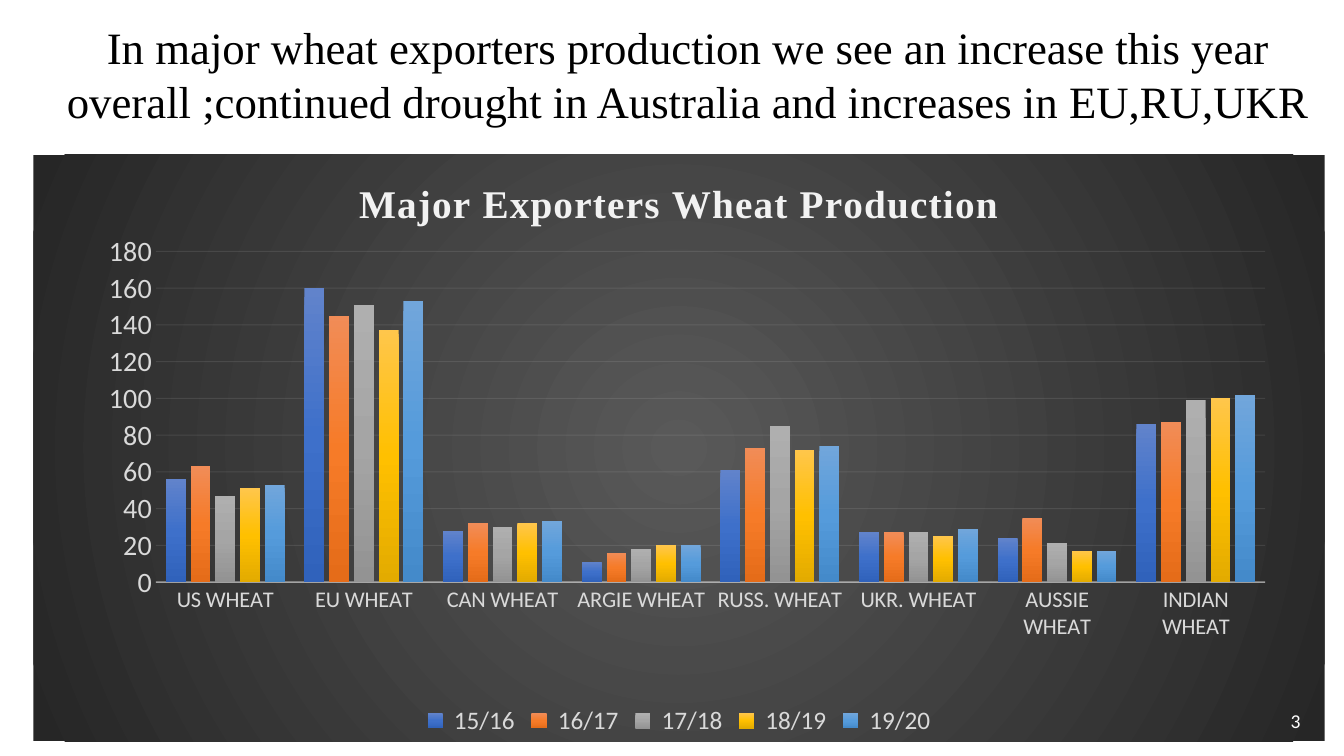
from lxml import etree
from pptx import Presentation
from pptx.chart.data import CategoryChartData
from pptx.dml.color import RGBColor
from pptx.enum.chart import XL_CHART_TYPE as ChartType, XL_LEGEND_POSITION as LegendPosition
from pptx.enum.chart import XL_TICK_MARK as TickMark
from pptx.enum.text import MSO_ANCHOR as Anchor, PP_ALIGN as Align
from pptx.oxml import parse_xml
from pptx.oxml.ns import nsdecls, qn
from pptx.util import Pt

COLORS = {
    "black": "000000",
    "white": "FFFFFF",
    "title": "F2F2F2",
    "label": "D9D9D9",
    "center": "595959",
    "edge": "262626",
}
LINEAR = '<a:lin ang="5400000" scaled="0"/>'
RADIAL = ('<a:path path="circle"><a:fillToRect l="50000" t="50000" '
          'r="50000" b="50000"/></a:path>')

categories = ["US WHEAT", "EU WHEAT", "CAN WHEAT", "ARGIE WHEAT",
              "RUSS. WHEAT", "UKR. WHEAT", "AUSSIE WHEAT", "INDIAN WHEAT"]
# season: (production, gradient from top to bottom)
seasons = {
    " 15/16": ([56, 160, 28, 11, 61, 27, 24, 86], ["6183CB", "3E70CA", "3062BB"]),
    " 16/17": ([63, 145, 32, 16, 73, 27, 35, 87], ["F18C57", "F67B28", "E56C19"]),
    " 17/18": ([47, 151, 30, 18, 85, 27, 21, 99], ["AFAFAF", "A5A5A5", "939393"]),
    " 18/19": ([51, 137, 32, 20, 72, 25, 17, 100], ["FFC64B", "FFC000", "E3AB00"]),
    " 19/20": ([53, 153, 33, 20, 74, 29, 17, 102], ["71A6DB", "559BDB", "448ACA"]),
}


def gradient_properties(stops, direction):
    """Return a c:spPr with evenly spaced gradient stops and no outline."""
    step = 100000 // (len(stops) - 1)
    stop_xml = "".join(f'<a:gs pos="{i * step}"><a:srgbClr val="{color}"/></a:gs>'
                       for i, color in enumerate(stops))
    return parse_xml(f'<c:spPr {nsdecls("c", "a")}><a:gradFill rotWithShape="1">'
                     f'<a:gsLst>{stop_xml}</a:gsLst>{direction}</a:gradFill>'
                     '<a:ln><a:noFill/></a:ln></c:spPr>')


def set_font(font, size, color, name="Calibri", bold=False):
    font.size = Pt(size)
    font.color.rgb = RGBColor.from_string(COLORS[color])
    font.name = name
    font.bold = bold


presentation = Presentation()
presentation.slide_width, presentation.slide_height = Pt(960), Pt(540)
slide = presentation.slides.add_slide(presentation.slide_layouts[6])

# Chart
chart_data = CategoryChartData(number_format="#,##0")
chart_data.categories = categories
for season, (production, _) in seasons.items():
    chart_data.add_series(season, production)
chart = slide.shapes.add_chart(ChartType.COLUMN_CLUSTERED, Pt(23.76), Pt(110.4),
                               Pt(922.4), Pt(419), chart_data).chart
set_font(chart.font, 10, "black")
chart_space = chart.element
chart_space.find(qn("c:chart")).addnext(
    gradient_properties([COLORS["center"], COLORS["edge"]], RADIAL))

chart.has_title = True
title = chart.chart_title.text_frame.paragraphs[0]
title_run = title.add_run()
title_run.text = "Major Exporters Wheat Production"
set_font(title_run.font, 28, "title", "Times New Roman", True)
title_run.font._element.set("spc", "100")
chart.chart_title.include_in_layout = False

chart.has_legend = True
chart.legend.position = LegendPosition.BOTTOM
chart.legend.include_in_layout = False
set_font(chart.legend.font, 18, "label")

plot = chart.plots[0]
plot.gap_width = 100
plot.overlap = -24
plot.vary_by_categories = False
for series, (_, gradient) in zip(plot.series, seasons.values()):
    properties = series._element.get_or_add_spPr()
    properties.getparent().replace(properties, gradient_properties(gradient, LINEAR))

category_axis, value_axis = chart.category_axis, chart.value_axis
for axis, size in ((category_axis, 16), (value_axis, 20)):
    axis.major_tick_mark = axis.minor_tick_mark = TickMark.NONE
    set_font(axis.tick_labels.font, size, "label")
value_axis.minimum_scale, value_axis.maximum_scale, value_axis.major_unit = 0, 180, 20
value_axis.tick_labels.number_format = "#,##0"
value_axis.tick_labels.number_format_is_linked = False
value_axis.format.line.fill.background()
value_axis.has_major_gridlines = True
for line, width, opacity in ((category_axis.format.line, 1, 54),
                             (value_axis.major_gridlines.format.line, 0.75, 10)):
    line.width = Pt(width)
    line.color.rgb = RGBColor.from_string(COLORS["title"])
    color = line.fill._xPr.find(".//" + qn("a:srgbClr"))
    etree.SubElement(color, qn("a:alpha")).set("val", str(opacity * 1000))

plot_area = chart_space.find(".//" + qn("c:plotArea"))
for layout in plot_area.findall(qn("c:layout")):
    plot_area.remove(layout)
plot_area.insert(0, parse_xml(
    f'<c:layout {nsdecls("c")}><c:manualLayout><c:layoutTarget val="inner"/>'
    '<c:xMode val="edge"/><c:yMode val="edge"/><c:x val="0.095"/><c:y val="0.165"/>'
    '<c:w val="0.859"/><c:h val="0.564"/></c:manualLayout></c:layout>'))

# Slide number and headline
headline = ("In major wheat exporters production we see an increase this year overall "
            ";continued drought in Australia and increases in EU,RU,UKR")
for text, box, align, anchor, size, color, font_name in (
        ("3", (720, 500.4, 216, 28.8), Align.RIGHT, Anchor.MIDDLE, 14, "white", "Calibri"),
        (headline, (23.76, 10.8, 936, 85), Align.CENTER, Anchor.TOP, 32, "black",
         "Times New Roman")):
    frame = slide.shapes.add_textbox(*map(Pt, box)).text_frame
    frame.word_wrap = True
    frame.vertical_anchor = anchor
    paragraph = frame.paragraphs[0]
    paragraph.text = text
    paragraph.alignment = align
    set_font(paragraph.font, size, color, font_name)

presentation.save("out.pptx")
